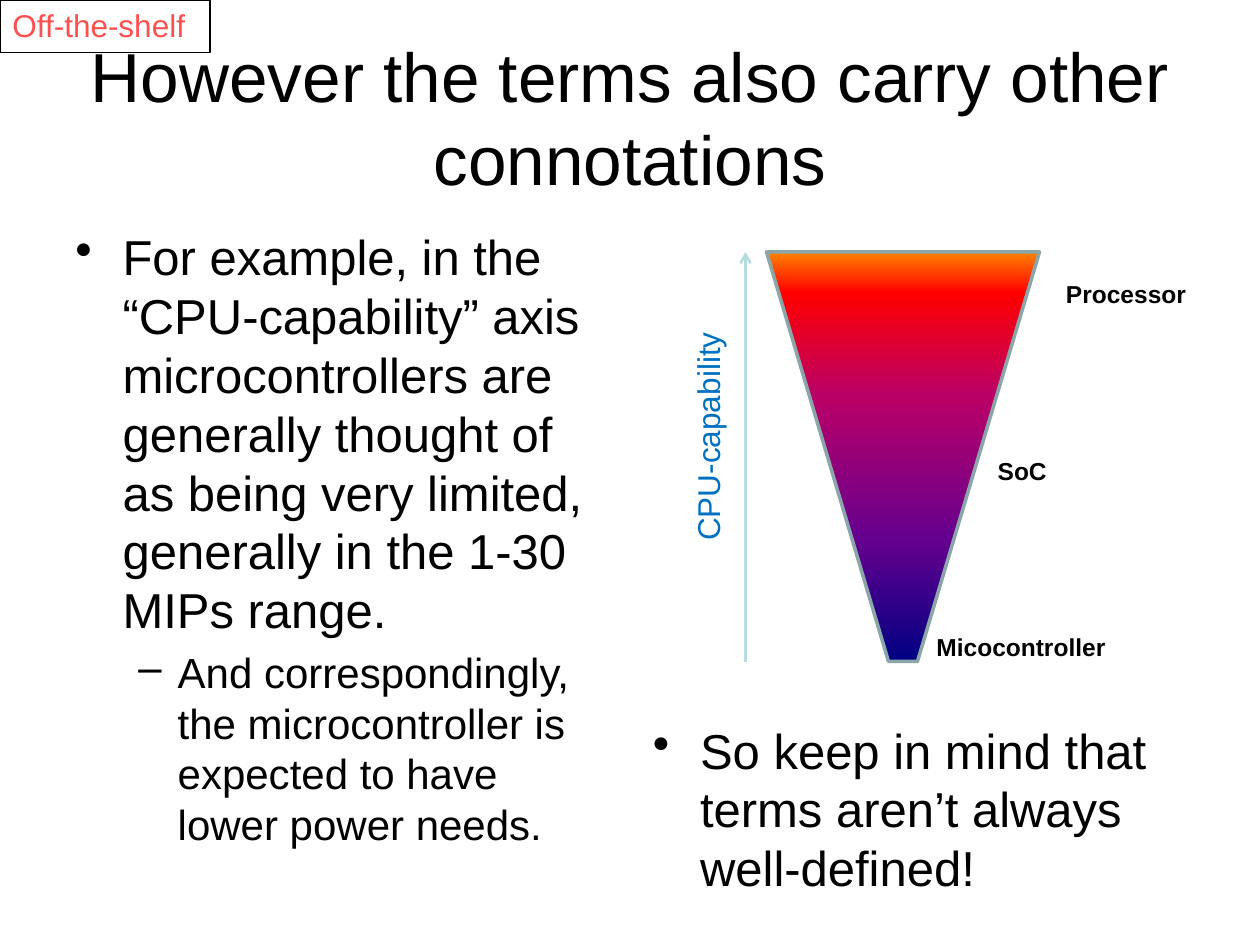
import pptx
import pptx.util
import pptx.dml.color
import pptx.enum.shapes
import pptx.enum.text
import pptx.oxml.ns
import lxml.etree

Pt = pptx.util.Pt
ANCHOR = pptx.enum.text.MSO_ANCHOR
ALIGN = pptx.enum.text.PP_ALIGN
SHAPE = pptx.enum.shapes.MSO_SHAPE

COLORS = {
    "text": "000000",
    "axis_label": "0070C0",
    "axis": "B6DCDF",
    "tag": "FF5050",
    "funnel_line": "8AA6A8",
}
FUNNEL_STOPS = [(0, "000082"), (30, "66008F"), (65, "BA0066"),
                (90, "FF0000"), (100, "FF8200")]


def add_xml(parent, tag, **attributes):
    return lxml.etree.SubElement(parent, pptx.oxml.ns.qn(tag), attributes)


class SlideBuilder:
    font = "Arial"

    def __init__(self, deck):
        self.slide = deck.slides.add_slide(deck.slide_layouts[6])

    def color(self, name):
        return pptx.dml.color.RGBColor.from_string(COLORS[name])

    def frame(self, left, top, width, height, anchor=ANCHOR.TOP, wrap=True):
        box = self.slide.shapes.add_textbox(Pt(left), Pt(top), Pt(width), Pt(height))
        box.text_frame.word_wrap = wrap
        box.text_frame.vertical_anchor = anchor
        return box.text_frame

    def para(self, frame, text, size, color="text", bold=False,
             align=ALIGN.LEFT, before=0, margin=0, hanging=0, bullet=None):
        para = frame.paragraphs[0]
        if para.runs:
            para = frame.add_paragraph()
        para.add_run().text = text
        para.alignment = align
        para.space_before = Pt(before)
        para.font.name = self.font
        para.font.size = Pt(size)
        para.font.bold = bold
        para.font.color.rgb = self.color(color)
        properties = para._p.get_or_add_pPr()
        properties.set("marL", str(Pt(margin)))
        properties.set("indent", str(Pt(-hanging)))
        if bullet:
            mark = lxml.etree.Element(pptx.oxml.ns.qn("a:buChar"), char=bullet)
            properties.find(pptx.oxml.ns.qn("a:defRPr")).addprevious(mark)
        return para

    def bullet(self, frame, text, level=0):
        size, margin, hanging, mark = [(28, 27, 27, "•"), (24, 58.5, 22.5, "–")][level]
        para = self.para(frame, text, size, before=size * 0.2,
                         margin=margin, hanging=hanging, bullet=mark)
        para.level = level

    def shape(self, kind, left, top, width, height, line, weight):
        shape = self.slide.shapes.add_shape(kind, Pt(left), Pt(top), Pt(width), Pt(height))
        shape.shadow.inherit = False
        shape.fill.background()
        shape.line.color.rgb = self.color(line)
        shape.line.width = Pt(weight)
        return shape

    def funnel(self, left, top, width, height, inset):
        shape = self.shape(SHAPE.TRAPEZOID, left, top, width, height, "funnel_line", 2)
        shape.adjustments[0] = inset
        properties = shape._element.spPr
        properties.xfrm.set("flipV", "1")
        gradient = lxml.etree.Element(pptx.oxml.ns.qn("a:gradFill"), rotWithShape="1")
        stops = add_xml(gradient, "a:gsLst")
        for percent, color in FUNNEL_STOPS:
            stop = add_xml(stops, "a:gs", pos=str(percent * 1000))
            add_xml(stop, "a:srgbClr", val=color)
        add_xml(gradient, "a:lin", ang="5400000", scaled="0")
        no_fill = properties.find(pptx.oxml.ns.qn("a:noFill"))
        properties.replace(no_fill, gradient)

    def arrow(self, x1, y1, x2, y2, color, weight):
        arrow = self.slide.shapes.add_connector(
            pptx.enum.shapes.MSO_CONNECTOR.STRAIGHT, Pt(x1), Pt(y1), Pt(x2), Pt(y2))
        arrow.line.color.rgb = self.color(color)
        arrow.line.width = Pt(weight)
        add_xml(arrow.line._get_or_add_ln(), "a:tailEnd", type="arrow")
        add_xml(arrow._element.spPr, "a:effectLst")


def main():
    deck = pptx.Presentation()
    deck.slide_width, deck.slide_height = Pt(720), Pt(540)
    page = SlideBuilder(deck)

    # Title
    title = page.frame(36, 21.6, 648, 90, anchor=ANCHOR.MIDDLE)
    page.para(title, "However the terms also carry other connotations", 39.6,
              align=ALIGN.CENTER)

    # Bulleted text
    example = page.frame(36, 126, 318, 356.4)
    page.bullet(example, "For example, in the “CPU-capability” axis microcontrollers "
                "are generally thought of as being very limited, generally in the "
                "1-30 MIPs range.")
    page.bullet(example, "And correspondingly, the microcontroller is expected to "
                "have lower power needs.", level=1)
    reminder = page.frame(366, 408, 318, 108)
    page.bullet(reminder, "So keep in mind that terms aren’t always well-defined!")

    # Capability funnel with its axis
    page.funnel(438, 144, 156, 234, inset=0.447)
    page.arrow(426, 378, 426, 144, "axis", 1.5)
    axis_label = page.frame(390, 197.3, 36, 118.8, wrap=False)
    axis_label._txBody.bodyPr.set("vert", "vert270")
    page.para(axis_label, "CPU-capability", 18, "axis_label")

    # Labels stepping down the funnel's right edge
    labels = page.frame(528, 156, 168, 244.8)
    for text, margin, gap in [("Processor", 74, 0), ("SoC", 35, 84),
                              ("Micocontroller", 0, 84)]:
        page.para(labels, text, 14, bold=True, before=gap, margin=margin)

    # Corner tag
    tag = page.shape(SHAPE.RECTANGLE, 0, 0, 120, 30, "text", 0.75)
    tag.text_frame.vertical_anchor = ANCHOR.TOP
    page.para(tag.text_frame, "Off-the-shelf", 18, "tag")

    deck.save("out.pptx")


if __name__ == "__main__":
    main()
